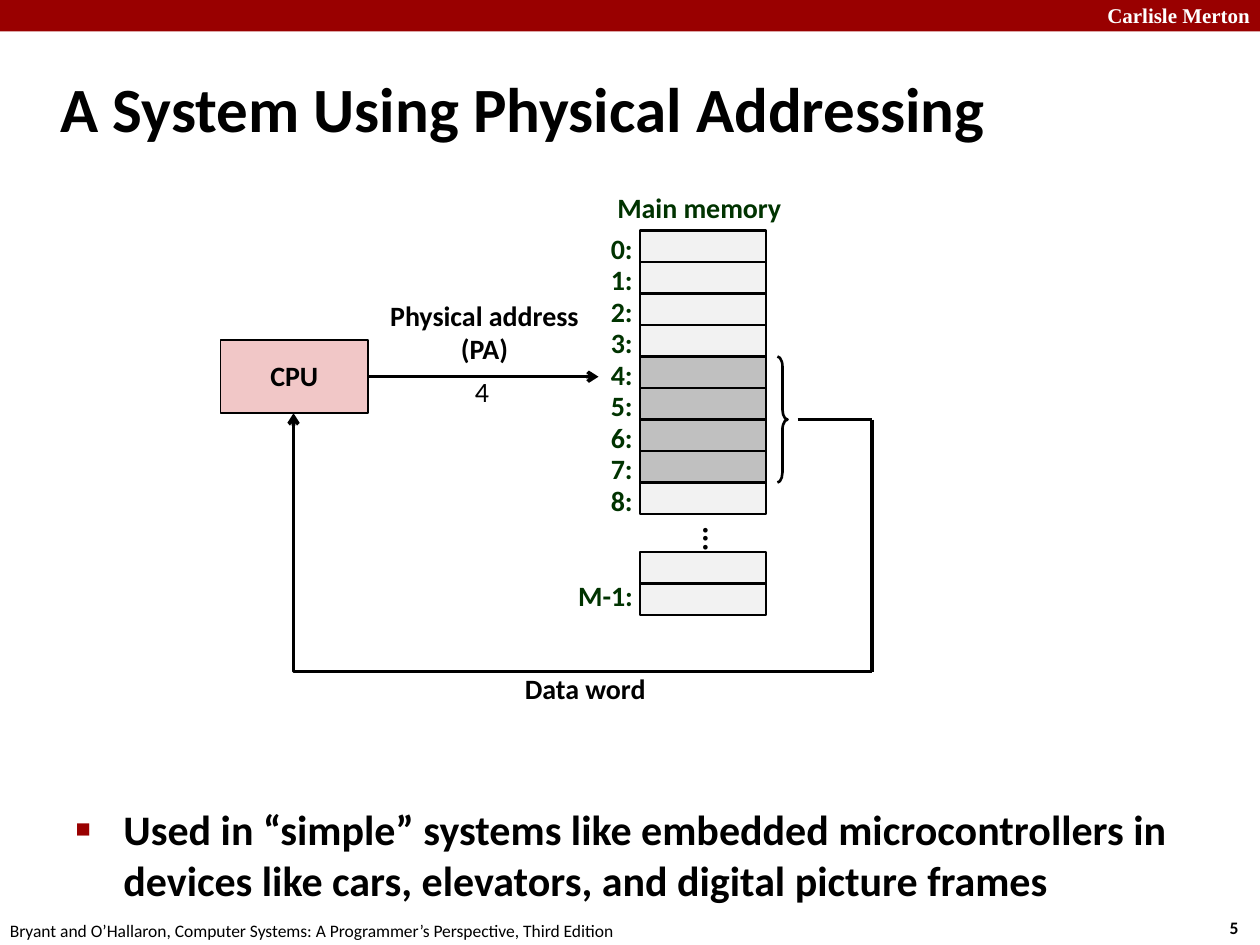
from dataclasses import dataclass

from lxml.etree import SubElement
from pptx import Presentation
from pptx.dml.color import RGBColor
from pptx.enum.shapes import MSO_CONNECTOR, MSO_SHAPE
from pptx.enum.text import MSO_ANCHOR, MSO_AUTO_SIZE, PP_ALIGN
from pptx.oxml.ns import qn
from pptx.util import Inches, Pt


@dataclass(frozen=True)
class Theme:
    font: str = "Calibri"
    header_font: str = "Times New Roman"
    black: str = "000000"
    white: str = "FFFFFF"
    red: str = "990000"
    green: str = "003300"
    pink: str = "F1C7C7"
    cell: str = "F2F2F2"
    selected: str = "C0C0C0"
    title_size: int = 36
    body_size: int = 24
    dots_size: int = 18
    label_size: int = 16
    header_size: int = 12
    footer_size: int = 10
    thin: float = 1
    border: float = 1.5
    wire: float = 2


class SlideBuilder:
    def __init__(self, slide, theme):
        self.slide = slide
        self.theme = theme

    def style(self, paragraph, size, color=None, bold=True, font=None,
              align=PP_ALIGN.LEFT, spacing=None, before=None):
        paragraph.alignment = align
        if spacing:
            paragraph.line_spacing = spacing
        if before is not None:
            paragraph.space_before = Pt(before)
        paragraph.font.name = font or self.theme.font
        paragraph.font.size = Pt(size)
        paragraph.font.bold = bold
        paragraph.font.color.rgb = RGBColor.from_string(color or self.theme.black)

    def place(self, placeholder, box, text, size, indent):
        """Move a placeholder, fill it and give it a hanging indent."""
        placeholder.left, placeholder.top, placeholder.width, placeholder.height = map(Inches, box)
        frame = placeholder.text_frame
        frame.text = text
        frame.auto_size = MSO_AUTO_SIZE.NONE
        self.style(frame.paragraphs[0], size)
        properties = frame.paragraphs[0]._p.get_or_add_pPr()
        properties.set("marL", str(Inches(indent)))
        properties.set("indent", str(-Inches(indent)))
        return properties

    def title(self, box, text):
        self.place(self.slide.shapes.title, box, text, self.theme.title_size, 0.13)
        self.slide.shapes.title.text_frame.vertical_anchor = MSO_ANCHOR.MIDDLE

    def bullet(self, box, text):
        properties = self.place(self.slide.placeholders[1], box, text, self.theme.body_size, 0.38)
        color = SubElement(properties, qn("a:buClr"))
        SubElement(color, qn("a:srgbClr"), val=self.theme.red)
        SubElement(properties, qn("a:buSzPct"), val="60000")
        SubElement(properties, qn("a:buChar"), char="■")

    def text(self, box, text, size, anchor=MSO_ANCHOR.TOP, wrap=False, vertical=None, **style):
        label = self.slide.shapes.add_textbox(*map(Inches, box))
        frame = label.text_frame
        frame.text = text
        frame.word_wrap = wrap
        frame.vertical_anchor = anchor
        if vertical:
            frame._txBody.bodyPr.set("vert", vertical)
        else:
            frame.auto_size = MSO_AUTO_SIZE.SHAPE_TO_FIT_TEXT
        for paragraph in frame.paragraphs:
            self.style(paragraph, size, **style)

    def shape(self, kind, box, fill=None, line=None, text=None):
        shape = self.slide.shapes.add_shape(kind, *map(Inches, box))
        shape.shadow.inherit = False
        if fill:
            shape.fill.solid()
            shape.fill.fore_color.rgb = RGBColor.from_string(fill)
        else:
            shape.fill.background()
        if line:
            shape.line.color.rgb = RGBColor.from_string(self.theme.black)
            shape.line.width = Pt(line)
        else:
            shape.line.fill.background()
        if text:
            shape.text_frame.text = text
            shape.text_frame.word_wrap = False
            shape.text_frame.vertical_anchor = MSO_ANCHOR.MIDDLE
            self.style(shape.text_frame.paragraphs[0], self.theme.label_size,
                       align=PP_ALIGN.CENTER, spacing=0.98)
        return shape

    def wire(self, start, end, arrow=False, kind=MSO_CONNECTOR.STRAIGHT, bend=None):
        wire = self.slide.shapes.add_connector(kind, *map(Inches, start + end))
        wire.line.color.rgb = RGBColor.from_string(self.theme.black)
        wire.line.width = Pt(self.theme.wire)
        properties = wire._element.spPr
        if arrow:
            SubElement(wire.line._get_or_add_ln(), qn("a:tailEnd"), type="arrow")
        if bend is not None:
            adjustments = properties.find(qn("a:prstGeom")).find(qn("a:avLst"))
            SubElement(adjustments, qn("a:gd"), name="adj1", fmla=f"val {int(bend * 100000)}")
        SubElement(properties, qn("a:effectLst"))


def main():
    theme = Theme()
    presentation = Presentation()
    presentation.slide_width, presentation.slide_height = Inches(10), Inches(7.5)
    slide = presentation.slides.add_slide(presentation.slide_layouts[1])
    builder = SlideBuilder(slide, theme)

    # Header band and footer
    builder.shape(MSO_SHAPE.RECTANGLE, (0, 0, 10, 0.25), theme.red)
    builder.text((8.64, -0.03, 1.38, 0.3), "Carlisle Merton", theme.header_size, wrap=True,
                 color=theme.white, font=theme.header_font, align=PP_ALIGN.RIGHT)
    builder.text((9.66, 7.23, 0.45, 0.27), "5", theme.footer_size)
    builder.text((-0.02, 7.25, 5.08, 0.27),
                 "Bryant and O’Hallaron, Computer Systems: A Programmer’s Perspective, Third Edition",
                 theme.footer_size, bold=False)

    # Title and remark
    builder.title((0.38, 0.42, 9.53, 0.86), "A System Using Physical Addressing")
    builder.bullet((0.5, 6.33, 9.09, 0.96),
                   "Used in “simple” systems like embedded microcontrollers in devices "
                   "like cars, elevators, and digital picture frames")

    # Main memory: addresses 0 to 8, a gap, then the last two cells
    memory_left, memory_top, cell_width, cell_height = 5.08, 1.83, 1, 0.25
    word = range(4, 8)
    address_style = dict(color=theme.green, spacing=0.88, before=6)
    builder.text((4.79, 1.5, 1.52, 0.33), "Main memory", theme.label_size,
                 align=PP_ALIGN.CENTER, **address_style)
    for address in range(9):
        top = memory_top + address * cell_height
        builder.shape(MSO_SHAPE.RECTANGLE, (memory_left, top, cell_width, cell_height),
                      theme.selected if address in word else theme.cell, theme.border)
        builder.text((4.75, top - 0.01, 0.37, 0.33), f"{address}:", theme.label_size,
                     **address_style)
    for top in (4.38, 4.63):
        builder.shape(MSO_SHAPE.RECTANGLE, (memory_left, top, cell_width, cell_height),
                      theme.cell, theme.border)
    builder.text((4.49, 4.58, 0.64, 0.33), "M-1:", theme.label_size, **address_style)
    centered = dict(anchor=MSO_ANCHOR.MIDDLE, align=PP_ALIGN.CENTER, spacing=0.98)
    builder.text((5.17, 4.08, 1, 0.25), "...", theme.dots_size, vertical="eaVert", **centered)

    # Processor and the address it sends
    builder.shape(MSO_SHAPE.RECTANGLE, (1.75, 2.7, 1.17, 0.58), theme.pink, theme.thin, "CPU")
    builder.wire((2.92, 2.99), (4.75, 2.99), arrow=True)
    builder.text((2.99, 2.33, 1.71, 0.63), "Physical address\n(PA)", theme.label_size, **centered)
    builder.text((3.67, 2.92, 0.34, 0.37), "4", theme.label_size, bold=False)

    # Data word returned to the processor
    brace = builder.shape(MSO_SHAPE.RIGHT_BRACE,
                          (6.17, memory_top + word[0] * cell_height, 0.08, len(word) * cell_height),
                          line=theme.border)
    brace.adjustments[0] = 1
    builder.wire((6.33, 3.33), (6.92, 3.33))
    builder.wire((6.92, 3.33), (6.92, 5.33))
    builder.wire((6.92, 5.33), (2.33, 3.28), arrow=True, kind=MSO_CONNECTOR.ELBOW, bend=1)
    builder.text((4.06, 5.29, 1.17, 0.37), "Data word", theme.label_size, **centered)

    presentation.save("out.pptx")


if __name__ == "__main__":
    main()
